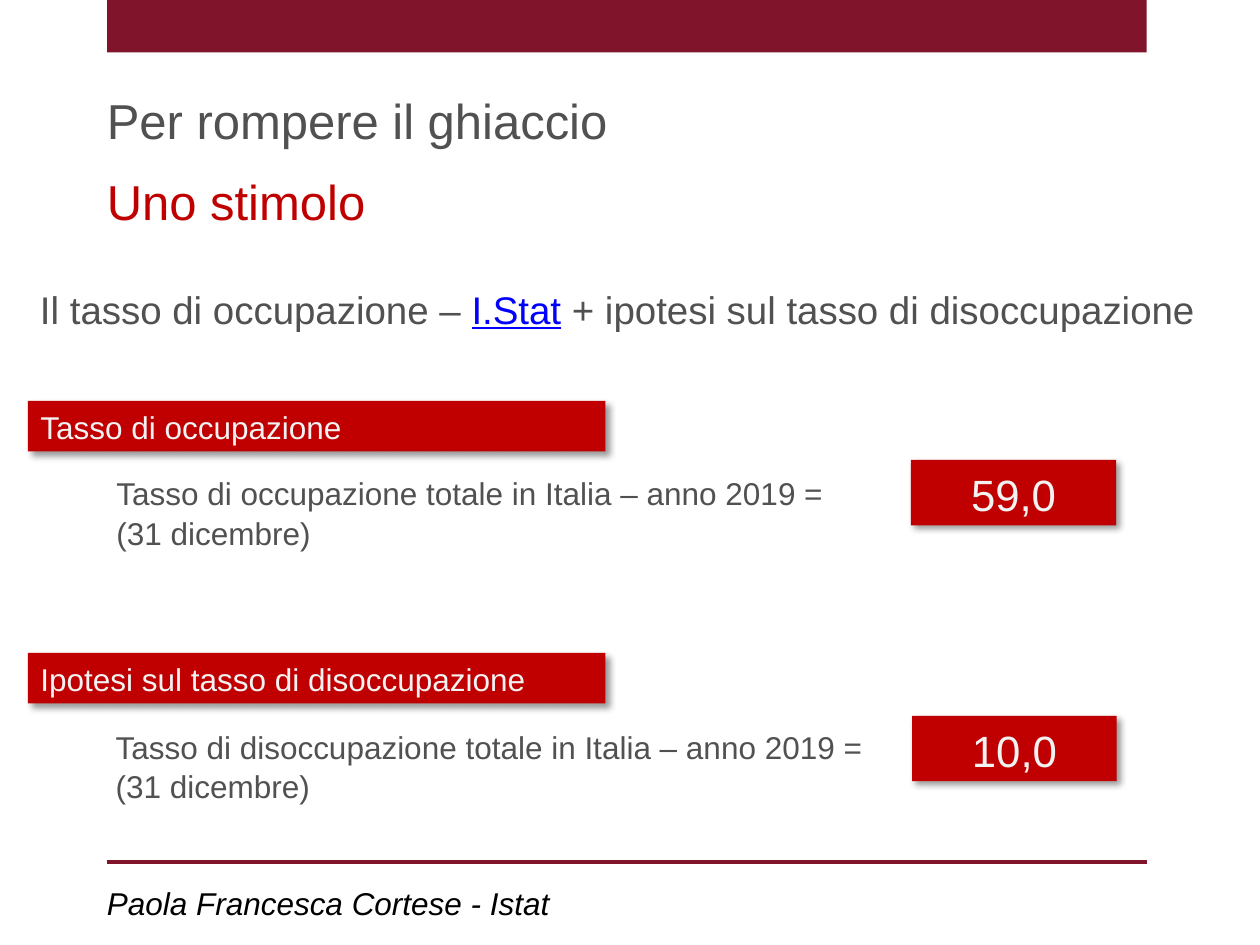
from typing import NamedTuple

from lxml import etree
from pptx import Presentation
from pptx import util as u
from pptx.dml.color import RGBColor
from pptx.enum import shapes, text
from pptx.oxml import ns

Pt = u.Pt
WINE = RGBColor(0x7F, 0x14, 0x2A)
RED = RGBColor(0xC0, 0x00, 0x00)
GREY = RGBColor(0x50, 0x51, 0x50)
PALE = RGBColor(0xF2, 0xF2, 0xF2)
BLUE = RGBColor(0x00, 0x00, 0xFF)
BLACK = RGBColor(0x00, 0x00, 0x00)
LINK = "I.Stat"


class Box(NamedTuple):
    """Place and size in points."""
    x: float
    y: float
    w: float
    h: float


class Rate(NamedTuple):
    """A heading, its label lines and its value."""
    head: str
    bar: Box
    lines: list
    note: Box
    value: str
    badge: Box


RATES = [
    Rate("Tasso di occupazione", Box(16, 229, 330, 29),
         ["Tasso di occupazione totale in Italia – anno 2019 =", "(31 dicembre)"],
         Box(59.5, 266.4, 603.5, 72.7), "59,0", Box(520.5, 262.8, 117.4, 37.4)),
    Rate("Ipotesi sul tasso di disoccupazione", Box(16, 373, 330, 29),
         ["Tasso di disoccupazione totale in Italia – anno 2019 =", "(31 dicembre)"],
         Box(59, 411.1, 603.5, 51.1), "10,0", Box(521.3, 409, 116.9, 37.4)),
]


def write(shape, lines: list, size: float, color: RGBColor, italic: bool = False,
          align=text.PP_ALIGN.LEFT, anchor=text.MSO_ANCHOR.TOP) -> None:
    """Fill a shape with formatted lines, marking the link word."""
    frame = shape.text_frame
    frame.word_wrap = True
    frame.vertical_anchor = anchor
    for i, line in enumerate(lines):
        par = frame.add_paragraph() if i else frame.paragraphs[0]
        par.alignment = align
        par.line_spacing = 1.05
        head, mark, tail = line.partition(LINK)
        for part in filter(None, (head, mark, tail)):
            run = par.add_run()
            run.text = part
            font = run.font
            font.name, font.size, font.italic = "Arial", Pt(size), italic
            font.color.rgb = BLUE if part == LINK else color
            font.underline = part == LINK


def label(slide, box: Box, lines: list, size: float, color: RGBColor, **form) -> None:
    """Add a plain text box."""
    write(slide.shapes.add_textbox(*map(Pt, box)), lines, size, color, **form)


def panel(slide, box: Box, color: RGBColor):
    """Add a flat rectangle without outline."""
    shape = slide.shapes.add_shape(shapes.MSO_SHAPE.RECTANGLE, *map(Pt, box))
    shape.shadow.inherit = False
    shape.fill.solid()
    shape.fill.fore_color.rgb = color
    shape.line.fill.background()
    return shape


def shade(shape) -> None:
    """Cast a soft shadow down and to the right."""
    group = shape.element.spPr.find(ns.qn("a:effectLst"))
    outer = etree.SubElement(group, ns.qn("a:outerShdw"), blurRad=str(Pt(4)),
                             dist=str(Pt(3)), dir="2700000", algn="tl", rotWithShape="0")
    tint = etree.SubElement(outer, ns.qn("a:srgbClr"), val="000000")
    etree.SubElement(tint, ns.qn("a:alpha"), val="40000")


def tag(slide, box: Box, line: str, size: float, **form) -> None:
    """Add a red shadowed panel with pale text."""
    shape = panel(slide, box, RED)
    shade(shape)
    write(shape, [line], size, PALE, anchor=text.MSO_ANCHOR.MIDDLE, **form)


def rule(slide, left: float, right: float, y: float) -> None:
    """Add the footer line."""
    line = slide.shapes.add_connector(shapes.MSO_CONNECTOR.STRAIGHT,
                                      Pt(left), Pt(y), Pt(right), Pt(y))
    line.line.color.rgb = WINE
    line.line.width = Pt(2)
    etree.SubElement(line.element.spPr, ns.qn("a:effectLst"))


def main() -> None:
    """Build and save the slide."""
    deck = Presentation()
    deck.slide_width, deck.slide_height = Pt(720), Pt(540)
    slide = deck.slides.add_slide(deck.slide_layouts[6])
    panel(slide, Box(61.2, 0, 594, 30), WINE)
    rule(slide, 61.2, 655.2, 492.5)
    label(slide, Box(54, 46.8, 593.3, 41), ["Per rompere il ghiaccio"], 28, GREY)
    label(slide, Box(54, 92.9, 660.2, 41), ["Uno stimolo"], 28, RED)
    label(slide, Box(15.8, 158.4, 698.4, 33.8),
          [f"Il tasso di occupazione – {LINK} + ipotesi sul tasso di disoccupazione"],
          22, GREY)
    for rate in RATES:
        tag(slide, rate.bar, rate.head, 18)
        label(slide, rate.note, rate.lines, 18, GREY)
        tag(slide, rate.badge, rate.value, 25, align=text.PP_ALIGN.CENTER)
    label(slide, Box(54, 500.4, 419.8, 28.8), ["Paola Francesca Cortese - Istat"],
          18, BLACK, italic=True)
    deck.save("out.pptx")


if __name__ == "__main__":
    main()
